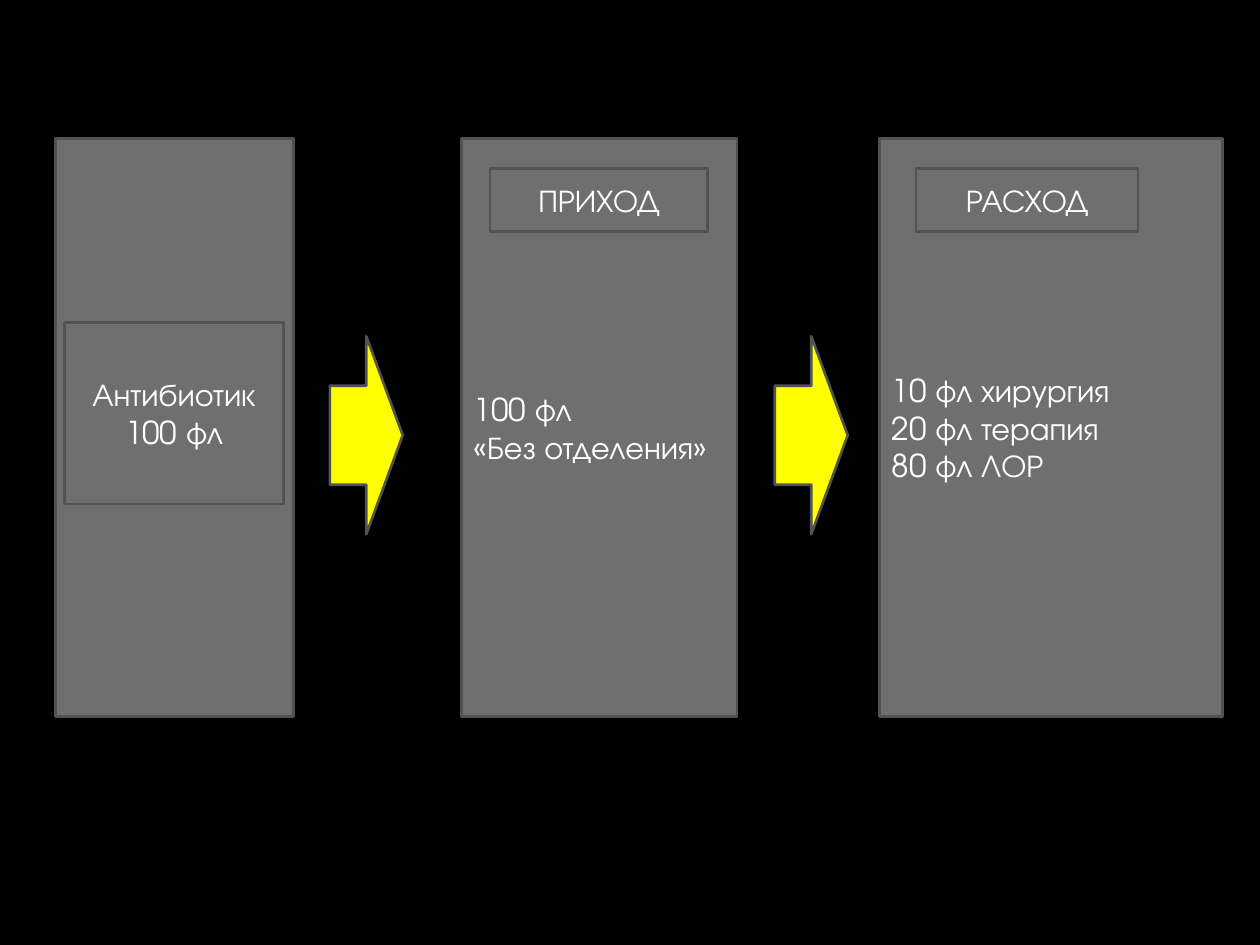
import pptx
import pptx.util
import pptx.dml.color
import pptx.enum.shapes
import pptx.enum.text

Cm = pptx.util.Cm
SHAPE = pptx.enum.shapes.MSO_SHAPE
ALIGN = pptx.enum.text.PP_ALIGN

COLORS = {
    "background": "000000",
    "panel": "6F6F6F",
    "outline": "525252",
    "arrow": "FFFF00",
    "text": "FFFFFF",
}
PANEL_TOP, PANEL_HEIGHT = 2.79, 11.66
HEADER_TOP, HEADER_HEIGHT = 3.4, 1.27


class StockSlide:
    font = "TeX Gyre Adventor"
    size = pptx.util.Pt(18)
    line_width = pptx.util.Pt(1.5)

    def __init__(self, prs):
        self.s = prs.slides.add_slide(prs.slide_layouts[6])
        self.paint(self.s.background.fill, "background")

    def rgb(self, name):
        return pptx.dml.color.RGBColor.from_string(COLORS[name])

    def paint(self, fill, name):
        fill.solid()
        fill.fore_color.rgb = self.rgb(name)

    def shape(self, shapes, kind, box, color):
        sp = shapes.add_shape(kind, *map(Cm, box))
        sp.shadow.inherit = False
        self.paint(sp.fill, color)
        sp.line.color.rgb = self.rgb("outline")
        sp.line.width = self.line_width
        return sp

    def box(self, shapes, box, text="", align=ALIGN.CENTER):
        sp = self.shape(shapes, SHAPE.RECTANGLE, box, "panel")
        tf = sp.text_frame
        tf.word_wrap = True
        tf.vertical_anchor = pptx.enum.text.MSO_ANCHOR.MIDDLE
        tf.text = text
        for p in tf.paragraphs:
            p.alignment = align
            for r in p.runs:
                r.font.name = self.font
                r.font.size = self.size
                r.font.color.rgb = self.rgb("text")

    def panel(self, left, width, text, label_box, label):
        shapes = self.s.shapes.add_group_shape().shapes
        self.box(shapes, (left, PANEL_TOP, width, PANEL_HEIGHT), text, ALIGN.LEFT)
        self.box(shapes, label_box, label)

    def arrow(self, left):
        self.shape(self.s.shapes, SHAPE.RIGHT_ARROW, (left, 6.78, 1.47, 3.99), "arrow")


def main():
    prs = pptx.Presentation()
    prs.slide_width, prs.slide_height = Cm(25.4), Cm(19.05)
    slide = StockSlide(prs)

    slide.panel(1.12, 4.8, "", (1.3, 6.5, 4.42, 3.66), "Антибиотик\n100 фл")
    slide.panel(9.3, 5.56, "100 фл\n«Без отделения»",
                (9.88, HEADER_TOP, 4.39, HEADER_HEIGHT), "ПРИХОД")
    slide.panel(17.73, 6.91, "10 фл хирургия\n20 фл терапия\n80 фл ЛОР",
                (18.47, HEADER_TOP, 4.47, HEADER_HEIGHT), "РАСХОД")
    for left in (6.65, 15.62):
        slide.arrow(left)

    prs.save("out.pptx")


if __name__ == "__main__":
    main()
